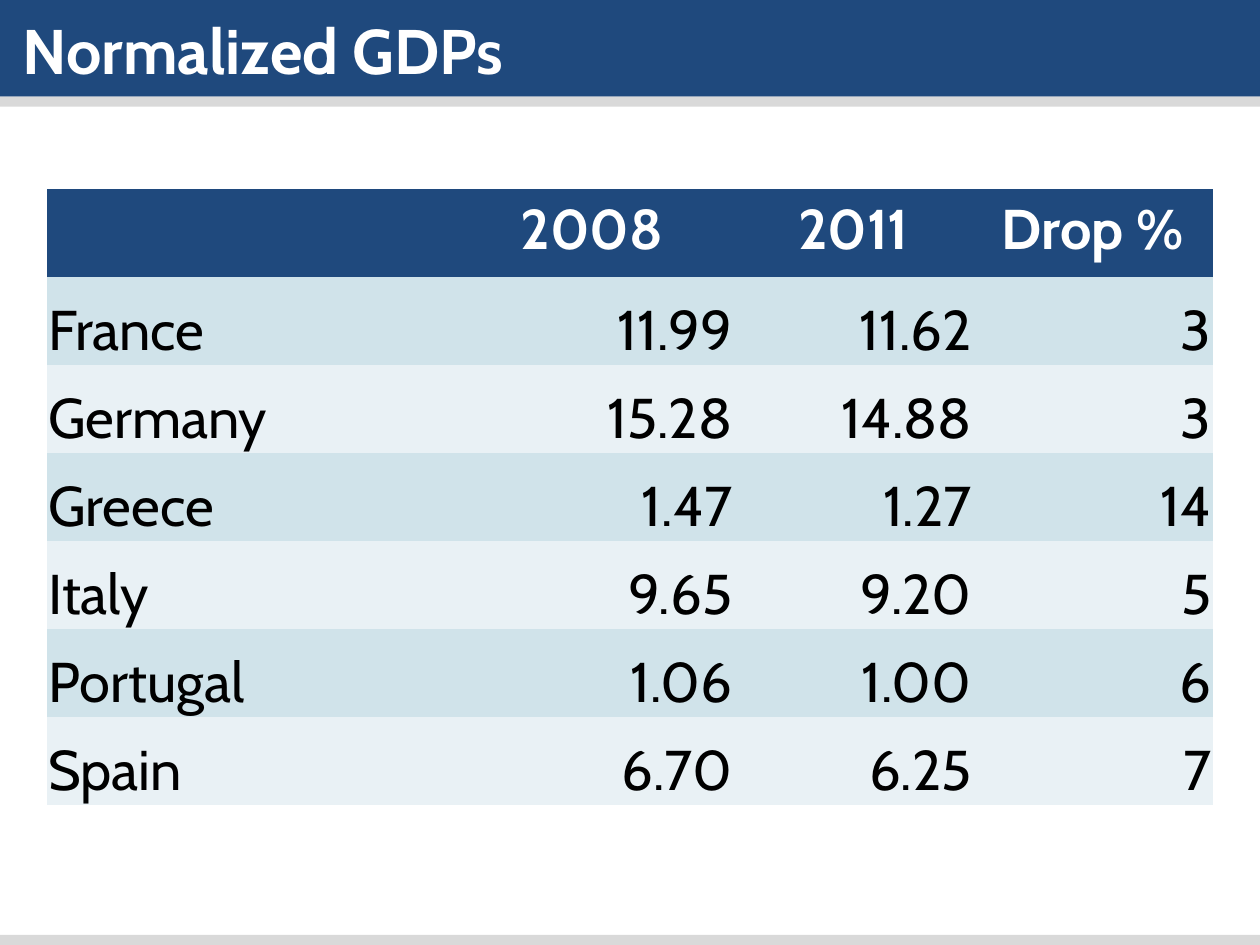
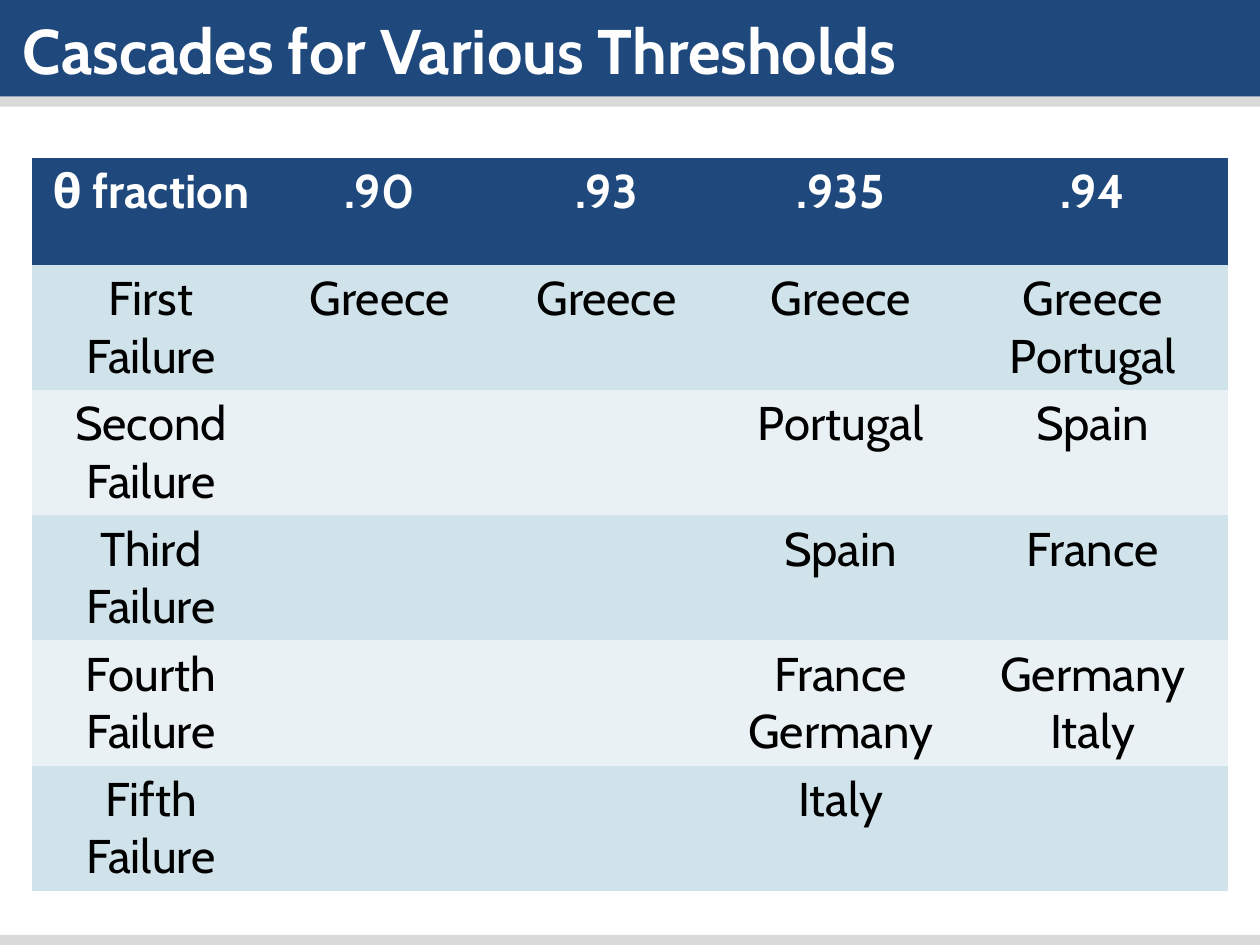
import pptx
import pptx.dml.color
import pptx.enum.shapes
import pptx.enum.text
import pptx.oxml.ns
import pptx.util

Pt = pptx.util.Pt
RGBColor = pptx.dml.color.RGBColor
ALIGN = pptx.enum.text.PP_ALIGN
ANCHOR = pptx.enum.text.MSO_ANCHOR

NAVY = RGBColor(0x1F, 0x49, 0x7D)
GRAY = RGBColor(0xD9, 0xD9, 0xD9)
WHITE = RGBColor(0xFF, 0xFF, 0xFF)
BLACK = RGBColor(0, 0, 0)
ROW_COLORS = (RGBColor(0xD0, 0xE3, 0xEA), RGBColor(0xE9, 0xF1, 0xF5))
FONT = "Cabin"
NO_GRID_STYLE = "{2D5ABB26-0587-4C30-8999-92F81FD0307C}"
SLIDE_WIDTH, SLIDE_HEIGHT = 720, 540
HEADER_HEIGHT, RULE_HEIGHT = 55.2, 5.8

BANDS = [
    (0, HEADER_HEIGHT, NAVY),
    (HEADER_HEIGHT, RULE_HEIGHT, GRAY),
    (SLIDE_HEIGHT - RULE_HEIGHT, RULE_HEIGHT, GRAY),
]

GDPS = {
    "title": "Normalized GDPs",
    "rows": [
        ("", "2008", "2011", "Drop %"),
        ("France", "11.99", "11.62", "3"),
        ("Germany", "15.28", "14.88", "3"),
        ("Greece", "1.47", "1.27", "14"),
        ("Italy", "9.65", "9.20", "5"),
        ("Portugal", "1.06", "1.00", "6"),
        ("Spain", "6.70", "6.25", "7"),
    ],
    "corner": (26.9, 108),
    "widths": (230.4, 162, 136.8, 136.8),
    "heights": (50.3, 50.3),
    "size": 32,
    "header_insets": (7.2, 3.6, 7.2, 3.6),
    "body_insets": (0.72, 0.72, 0.72, 0),
    "body_anchor": ANCHOR.BOTTOM,
    "body_aligns": (ALIGN.LEFT, ALIGN.RIGHT),
}

CASCADES = {
    "title": "Cascades for Various Thresholds",
    "rows": [
        ("θ fraction", ".90", ".93", ".935", ".94"),
        ("First\nFailure", "Greece", "Greece", "Greece", "Greece\nPortugal"),
        ("Second Failure", "", "", "Portugal", "Spain"),
        ("Third Failure", "", "", "Spain", "France"),
        ("Fourth\nFailure", "", "", "France\nGermany", "Germany\nItaly"),
        ("Fifth\nFailure", "", "", "Italy", ""),
    ],
    "corner": (18.2, 90.2),
    "widths": (136.1, 125.3, 133.9, 133.9, 154.1),
    "heights": (61.2, 69.8),
    "size": 27,
    "header_insets": (6, 3, 6, 3),
    "body_insets": (6, 3, 6, 3),
    "body_anchor": ANCHOR.TOP,
    "body_aligns": (ALIGN.CENTER, ALIGN.CENTER),
}


def format_text(paragraph, size, color, bold, align):
    paragraph.alignment = align
    for run in paragraph.runs:
        run.font.name = FONT
        run.font.size = Pt(size)
        run.font.bold = bold
        run.font.color.rgb = color


def add_master_bands(deck, slide):
    master_tree = deck.slide_master.shapes.element
    for position, (top, height, color) in enumerate(BANDS, start=2):
        band = slide.shapes.add_shape(
            pptx.enum.shapes.MSO_SHAPE.RECTANGLE,
            0, Pt(top), Pt(SLIDE_WIDTH), Pt(height))
        band.shadow.inherit = False
        band.fill.solid()
        band.fill.fore_color.rgb = color
        band.line.fill.background()
        master_tree.insert(position, band.element)


def add_title(slide, text):
    title = slide.shapes.title
    title.left, title.top = Pt(5.8), Pt(0)
    title.width, title.height = Pt(672), Pt(56.2)
    frame = title.text_frame
    frame.text = text
    frame.word_wrap = True
    frame.auto_size = pptx.enum.text.MSO_AUTO_SIZE.NONE
    frame.vertical_anchor = ANCHOR.MIDDLE
    format_text(frame.paragraphs[0], 36, WHITE, True, ALIGN.LEFT)


def fill_cell(cell, text, row, column, content):
    is_header = row == 0
    cell.fill.solid()
    cell.fill.fore_color.rgb = NAVY if is_header else ROW_COLORS[(row - 1) % 2]
    insets = content["header_insets" if is_header else "body_insets"]
    (cell.margin_left, cell.margin_top,
     cell.margin_right, cell.margin_bottom) = map(Pt, insets)
    cell.vertical_anchor = ANCHOR.TOP if is_header else content["body_anchor"]
    align = ALIGN.CENTER if is_header else content["body_aligns"][min(column, 1)]
    cell.text_frame.text = text
    for paragraph in cell.text_frame.paragraphs:
        format_text(paragraph, content["size"],
                    WHITE if is_header else BLACK, is_header, align)


def add_data_table(slide, content):
    rows, widths = content["rows"], content["widths"]
    header_height, body_height = content["heights"]
    left, top = content["corner"]
    total_height = header_height + body_height * (len(rows) - 1)
    frame = slide.shapes.add_table(
        len(rows), len(widths), Pt(left), Pt(top),
        Pt(sum(widths)), Pt(total_height))
    for style in frame.element.iter(pptx.oxml.ns.qn("a:tableStyleId")):
        style.text = NO_GRID_STYLE
    table = frame.table
    for column, width in zip(table.columns, widths):
        column.width = Pt(width)
    for row, texts in enumerate(rows):
        table.rows[row].height = Pt(body_height if row else header_height)
        for column, text in enumerate(texts):
            fill_cell(table.cell(row, column), text, row, column, content)


def main():
    deck = pptx.Presentation()
    deck.slide_width, deck.slide_height = Pt(SLIDE_WIDTH), Pt(SLIDE_HEIGHT)
    title_only = deck.slide_layouts[5]
    for content in (GDPS, CASCADES):
        slide = deck.slides.add_slide(title_only)
        add_title(slide, content["title"])
        add_data_table(slide, content)
    add_master_bands(deck, deck.slides[0])
    deck.save("out.pptx")


if __name__ == "__main__":
    main()
